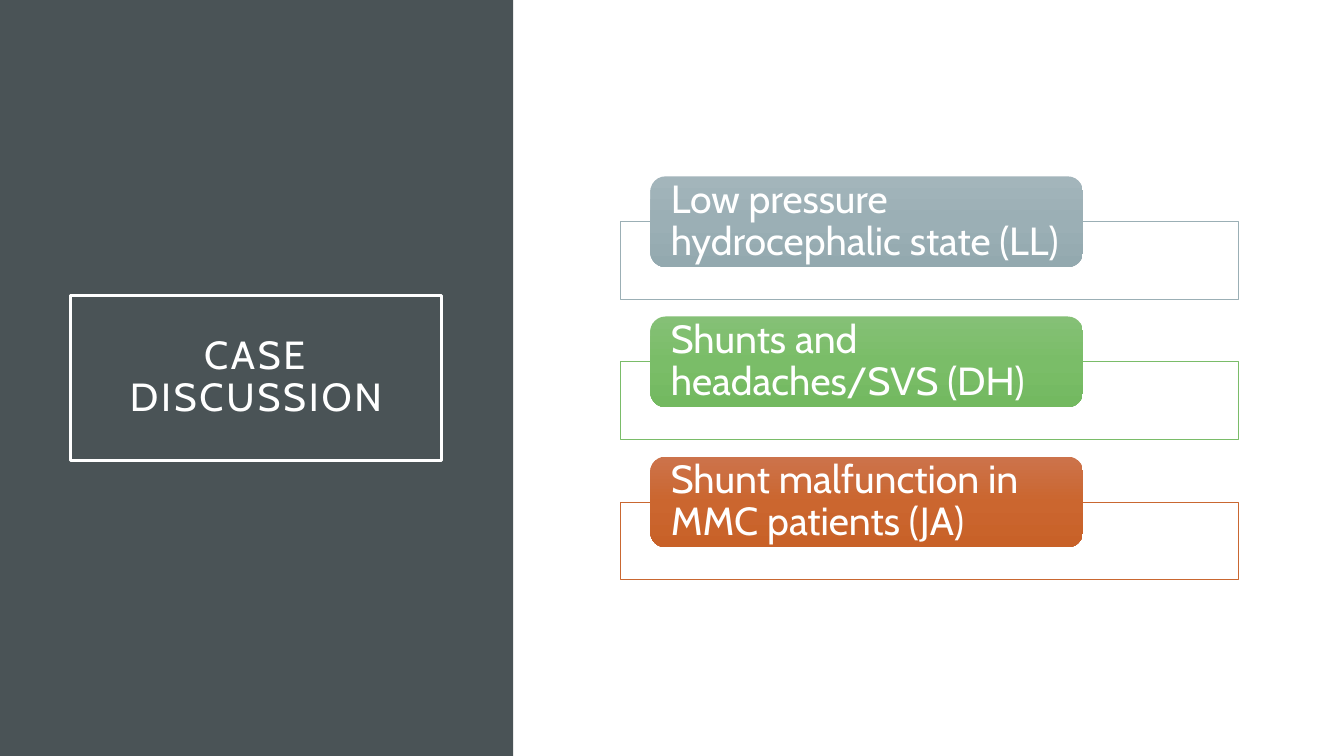
from copy import deepcopy

from lxml import etree
from pptx import Presentation
from pptx.dml.color import RGBColor
from pptx.enum.shapes import MSO_SHAPE
from pptx.enum.text import MSO_ANCHOR, PP_ALIGN
from pptx.oxml.ns import qn
from pptx.util import Inches, Pt

RECTANGLE = MSO_SHAPE.RECTANGLE
ROUNDED = MSO_SHAPE.ROUNDED_RECTANGLE
MIDDLE = MSO_ANCHOR.MIDDLE
LEFT, CENTER = PP_ALIGN.LEFT, PP_ALIGN.CENTER
FONT = "Cabin"
COLORS = {
    "white": "FFFFFF",
    "panel": "4A5356",
    "slate_line": "9BAFB5",
    "slate_top": "A3B5BB",
    "slate_middle": "9BAFB5",
    "slate_bottom": "93A9AF",
    "green_line": "7ABC69",
    "green_top": "85C076",
    "green_middle": "7ABD68",
    "green_bottom": "73B960",
    "orange_line": "C96731",
    "orange_top": "CC734B",
    "orange_middle": "CB662F",
    "orange_bottom": "C86128",
}
CASES = [
    ("Low pressure hydrocephalic state (LL)", "slate"),
    ("Shunts and headaches/SVS (DH)", "green"),
    ("Shunt malfunction in MMC patients (JA)", "orange"),
]


def color(name):
    """Return the named colour."""
    return RGBColor.from_string(COLORS[name])


def add_block(slide, kind, left, top, width, height, fill=None, line=None, weight=0.5):
    """Add a preset shape without shadow, with optional fill and outline."""
    block = slide.shapes.add_shape(
        kind, Inches(left), Inches(top), Inches(width), Inches(height))
    block.shadow.inherit = False
    if fill:
        block.fill.solid()
        block.fill.fore_color.rgb = color(fill)
    else:
        block.fill.background()
    if line:
        block.line.color.rgb = color(line)
        block.line.width = Pt(weight)
    else:
        block.line.fill.background()
    return block


def write(block, text, align, inset_x, inset_y):
    """Write one white paragraph, vertically centred in the block."""
    frame = block.text_frame
    frame.word_wrap = True
    frame.vertical_anchor = MIDDLE
    frame.margin_left = frame.margin_right = Inches(inset_x)
    frame.margin_top = frame.margin_bottom = Inches(inset_y)
    paragraph = frame.paragraphs[0]
    paragraph.text = text
    paragraph.alignment = align
    paragraph.line_spacing = 0.9
    paragraph.font.name = FONT
    paragraph.font.size = Pt(28)
    paragraph.font.color.rgb = color("white")
    return paragraph


def shade(block, hue):
    """Fill the block with a three-stop gradient running downwards."""
    block.fill.gradient()
    block.fill.gradient_angle = 270
    first_stop = block.fill._xPr.find(".//" + qn("a:gs"))
    first_stop.addnext(deepcopy(first_stop))
    parts = ("top", "middle", "bottom")
    for index, (stop, part) in enumerate(zip(block.fill.gradient_stops, parts)):
        stop.position = index / 2
        stop.color.rgb = color(f"{hue}_{part}")


def add_title_panel(slide, left, top, width, height):
    """Draw the dark side panel with its framed title."""
    add_block(slide, RECTANGLE, left, top, width, height, fill="panel")
    title = add_block(slide, RECTANGLE, left + 0.7, top + 2.93, 3.68, 1.64,
                      line="white", weight=2.5)
    paragraph = write(title, "CASE DISCUSSION", CENTER, 0.2, 0.2)
    paragraph.runs[0].font._element.set("spc", "200")


def add_case(slide, left, top, width, text, hue):
    """Draw one case: an outlined bar with a gradient label over its top edge."""
    bar = add_block(slide, RECTANGLE, left, top + 0.45, width, 0.77,
                    fill="white", line=f"{hue}_line")
    white = bar.fill._xPr.find(qn("a:solidFill")).find(qn("a:srgbClr"))
    etree.SubElement(white, qn("a:alpha"), val="90000")
    label = add_block(slide, ROUNDED, left + 0.3, top, width * 0.7, 0.9)
    shade(label, hue)
    write(label, text, LEFT, 0.16, 0)


def add_case_list(slide, left, top, width, pitch):
    """Stack the cases at an equal pitch."""
    for index, (text, hue) in enumerate(CASES):
        add_case(slide, left, top + index * pitch, width, text, hue)


def main():
    """Build and save the slide."""
    presentation = Presentation()
    presentation.slide_width = Inches(13.33)
    presentation.slide_height = Inches(7.5)
    slide = presentation.slides.add_slide(presentation.slide_layouts[6])
    add_title_panel(slide, 0, 0, 5.09, 7.5)
    add_case_list(slide, 6.15, 1.75, 6.13, 1.39)
    presentation.save("out.pptx")


if __name__ == "__main__":
    main()
